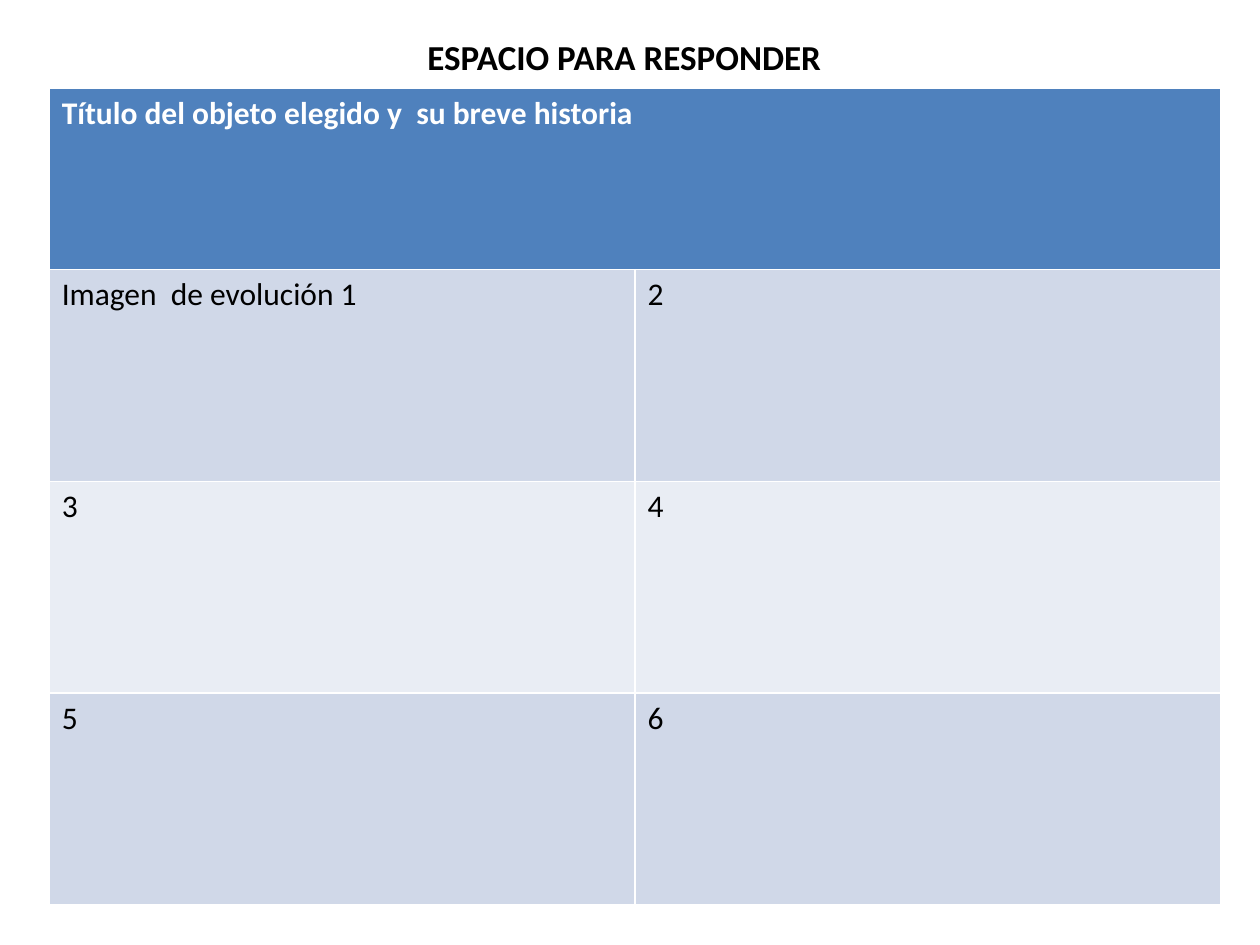
import pptx
import pptx.dml.color
import pptx.enum.text
import pptx.util
from pptx.util import Inches


def color(hex_string):
    return pptx.dml.color.RGBColor.from_string(hex_string)


def add_text(paragraph, text, size, hex_string, bold):
    run = paragraph.add_run()
    run.text = text
    run.font.name = "Calibri"
    run.font.size = pptx.util.Pt(size)
    run.font.bold = bold
    run.font.color.rgb = color(hex_string)


presentation = pptx.Presentation()
presentation.slide_width = Inches(10)
presentation.slide_height = Inches(7.5)
slide = presentation.slides.add_slide(presentation.slide_layouts[5])

# Title
title = slide.shapes.title
title.left, title.top = Inches(1.09), Inches(0.23)
title.width, title.height = Inches(7.73), Inches(0.44)
title.text_frame.word_wrap = True
title.text_frame.auto_size = pptx.enum.text.MSO_AUTO_SIZE.NONE
title.text_frame.vertical_anchor = pptx.enum.text.MSO_ANCHOR.TOP
title_paragraph = title.text_frame.paragraphs[0]
title_paragraph.alignment = pptx.enum.text.PP_ALIGN.CENTER
add_text(title_paragraph, "ESPACIO PARA RESPONDER", 20, "000000", True)

# Answer table: the default table style draws the white borders
rows = [
    ["Título del objeto elegido y  su breve historia"],
    ["Imagen  de evolución 1", "2"],
    ["3", "4"],
    ["5", "6"],
]
row_fills = ["4F81BD", "D0D8E8", "E9EDF4", "D0D8E8"]
row_heights = [1.44, 1.68, 1.68, 1.68]
table = slide.shapes.add_table(
    len(rows), 2, Inches(0.39), Inches(0.7), Inches(9.3), Inches(sum(row_heights))
).table
table.cell(0, 0).merge(table.cell(0, 1))

for row_index, texts in enumerate(rows):
    table.rows[row_index].height = Inches(row_heights[row_index])
    is_header = row_index == 0
    for column_index, text in enumerate(texts):
        cell = table.cell(row_index, column_index)
        cell.fill.solid()
        cell.fill.fore_color.rgb = color(row_fills[row_index])
        text_color = "FFFFFF" if is_header else "000000"
        add_text(cell.text_frame.paragraphs[0], text, 18, text_color, is_header)

presentation.save("out.pptx")
